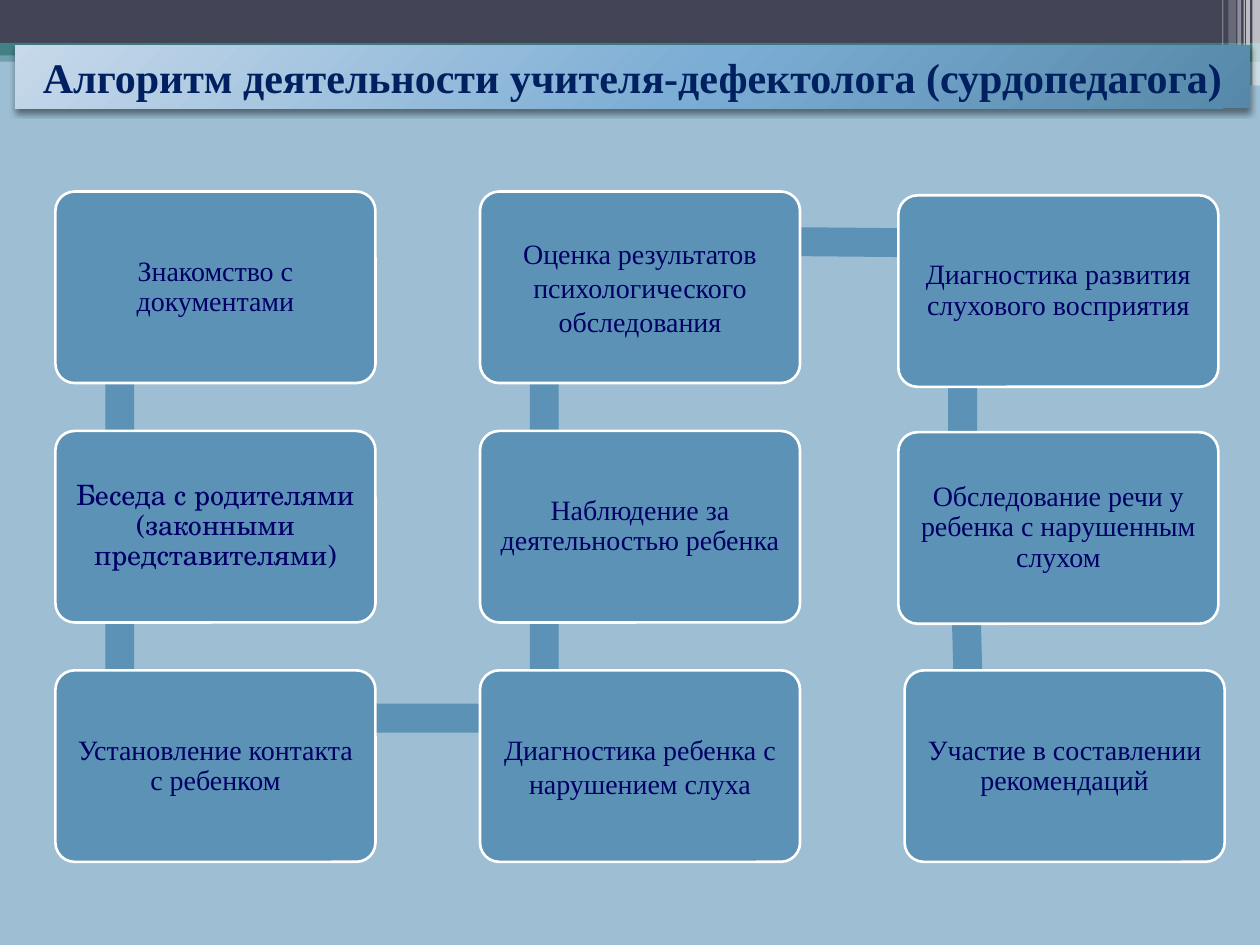
from dataclasses import dataclass
from itertools import pairwise
from math import atan2, degrees, hypot

from lxml.etree import SubElement
from pptx import Presentation
from pptx.dml.color import RGBColor
from pptx.enum.shapes import MSO_SHAPE
from pptx.enum.text import MSO_ANCHOR, PP_ALIGN
from pptx.oxml import parse_xml
from pptx.oxml.ns import nsdecls, qn
from pptx.util import Inches, Pt


@dataclass(frozen=True)
class Theme:
    background: str = "9DBED3"
    dark: str = "424456"
    teal: str = "438086"
    white: str = "FFFFFF"
    card: str = "5C92B5"
    card_text: str = "000066"
    title_text: str = "002060"
    title_gradient: tuple = ((0, "C7D9EA"), (55, "7CADD4"), (100, "5688A9"))
    font: str = "Times New Roman"
    accent_font: str = "TeX Gyre Schola"
    title_size: int = 24
    card_size: int = 16


CARD_WIDTH, CARD_HEIGHT = 2.54, 1.52
ANCHOR_X, ANCHOR_Y = 0.51, 0.38  # where the links meet, inside each card
LINK_THICKNESS = 0.23


class SlideBuilder:
    def __init__(self, slide, theme):
        self.slide = slide
        self.theme = theme
        slide.background.fill.solid()
        slide.background.fill.fore_color.rgb = RGBColor.from_string(theme.background)

    def block(self, left, top, width, height, color, opacity=100,
              preset=MSO_SHAPE.RECTANGLE):
        block = self.slide.shapes.add_shape(
            preset, Inches(left), Inches(top), Inches(width), Inches(height))
        block.shadow.inherit = False
        block.fill.solid()
        block.fill.fore_color.rgb = RGBColor.from_string(color)
        block.line.fill.background()
        if opacity < 100:
            tint = block.element.spPr.find(".//" + qn("a:srgbClr"))
            SubElement(tint, qn("a:alpha"), val=str(opacity * 1000))
        return block

    def label(self, block, wording, size, color, font, bold=False, spacing=None):
        frame = block.text_frame
        frame.word_wrap = True
        paragraph = frame.paragraphs[0]
        paragraph.alignment = PP_ALIGN.CENTER
        paragraph.line_spacing = spacing
        run = paragraph.add_run()
        run.text = wording
        run.font.size = Pt(size)
        run.font.name = font
        run.font.bold = bold
        run.font.color.rgb = RGBColor.from_string(color)

    def link(self, start, end):
        """Bar between the anchor points of two cards."""
        dx, dy = end[0] - start[0], end[1] - start[1]
        length = hypot(dx, dy)
        center_x = (start[0] + end[0]) / 2 + ANCHOR_X
        center_y = (start[1] + end[1]) / 2 + ANCHOR_Y
        bar = self.block(center_x - length / 2, center_y - LINK_THICKNESS / 2,
                         length, LINK_THICKNESS, self.theme.card)
        bar.rotation = degrees(atan2(dy, dx)) % 360

    def card(self, left, top, wording, font, spacing):
        card = self.block(left, top, CARD_WIDTH, CARD_HEIGHT, self.theme.card,
                          preset=MSO_SHAPE.ROUNDED_RECTANGLE)
        card.adjustments[0] = 0.1
        card.line.color.rgb = RGBColor.from_string(self.theme.white)
        card.line.width = Pt(1.5)
        frame = card.text_frame
        frame.vertical_anchor = MSO_ANCHOR.MIDDLE
        frame.margin_left = frame.margin_right = Inches(0.07)
        frame.margin_top = frame.margin_bottom = Inches(0.07)
        self.label(card, wording, self.theme.card_size, self.theme.card_text,
                   font, spacing=spacing)

    def title(self, left, top, width, height, wording):
        banner = self.block(left, top, width, height, self.theme.card)
        properties = banner.element.spPr
        stops = "".join(
            f'<a:gs pos="{position * 1000}"><a:srgbClr val="{color}"/></a:gs>'
            for position, color in self.theme.title_gradient)
        properties.replace(properties.find(qn("a:solidFill")), parse_xml(
            f'<a:gradFill {nsdecls("a")} rotWithShape="1"><a:gsLst>{stops}</a:gsLst>'
            '<a:path path="circle"><a:fillToRect l="-40000" t="-90000" '
            'r="140000" b="190000"/></a:path></a:gradFill>'))
        properties.find(qn("a:effectLst")).append(parse_xml(
            f'<a:outerShdw {nsdecls("a")} blurRad="{Pt(4)}" dist="{Pt(2)}" '
            'dir="5400000" rotWithShape="0"><a:srgbClr val="000000">'
            '<a:alpha val="45000"/></a:srgbClr></a:outerShdw>'))
        banner.text_frame.vertical_anchor = MSO_ANCHOR.TOP
        self.label(banner, wording, self.theme.title_size, self.theme.title_text,
                   self.theme.font, bold=True)


def main():
    theme = Theme()
    presentation = Presentation()
    presentation.slide_width, presentation.slide_height = Inches(10), Inches(7.5)
    builder = SlideBuilder(
        presentation.slides.add_slide(presentation.slide_layouts[6]), theme)

    # Header bands
    for band in (
        (0, 0.4, 10, 0.09, theme.teal, 50),
        (0, 0, 10, 0.34, theme.dark),
        (0, 0.34, 10, 0.1, theme.teal),
        (5.92, 0.39, 4.08, 0.1, theme.teal),
        (5.92, 0.48, 4.08, 0.2, theme.teal, 50),
    ):
        builder.block(*band)
    for left, top, width, height in ((5.91, 0.54, 3.35, 0.03), (8.06, 0.64, 1.75, 0.04)):
        builder.block(left, top, width, height, theme.background,
                      preset=MSO_SHAPE.ROUNDED_RECTANGLE)

    # Pale stripes at the right edge
    for left, width, height, opacity in (
        (9.94, 0.06, 0.68, 65), (9.89, 0.03, 0.68, 65), (9.87, 0.01, 0.68, 60),
        (9.82, 0.03, 0.68, 40), (9.75, 0.06, 0.64, 20), (9.7, 0.01, 0.64, 30),
    ):
        builder.block(left, 0, width, height, theme.white, opacity)

    # Steps in working order: down, up, and down again
    rows = (1.52, 3.42, 5.32)
    first, second = 0.44, 3.81
    steps = (
        (first, rows[0], "Знакомство с документами", theme.font, 0.9),
        (first, rows[1], "Беседа с родителями (законными представителями)",
         theme.accent_font, 0.9),
        (first, rows[2], "Установление контакта с ребенком", theme.font, 0.9),
        (second, rows[2], "Диагностика ребенка с нарушением слуха", theme.font, 1.0),
        (second, rows[1], "Наблюдение за деятельностью ребенка", theme.font, 0.9),
        (second, rows[0], "Оценка результатов психологического обследования",
         theme.font, 1.0),
        (7.13, 1.55, "Диагностика развития слухового восприятия", theme.font, 0.9),
        (7.13, 3.43, "Обследование речи у ребенка с нарушенным слухом",
         theme.font, 0.9),
        (7.18, rows[2], "Участие в составлении рекомендаций", theme.font, 0.9),
    )
    for step, following in pairwise(steps):
        builder.link(step[:2], following[:2])
    for step in steps:
        builder.card(*step)

    # Title banner
    builder.title(0.12, 0.36, 9.8, 0.5,
                  "Алгоритм деятельности учителя-дефектолога (сурдопедагога)")

    presentation.save("out.pptx")


if __name__ == "__main__":
    main()
